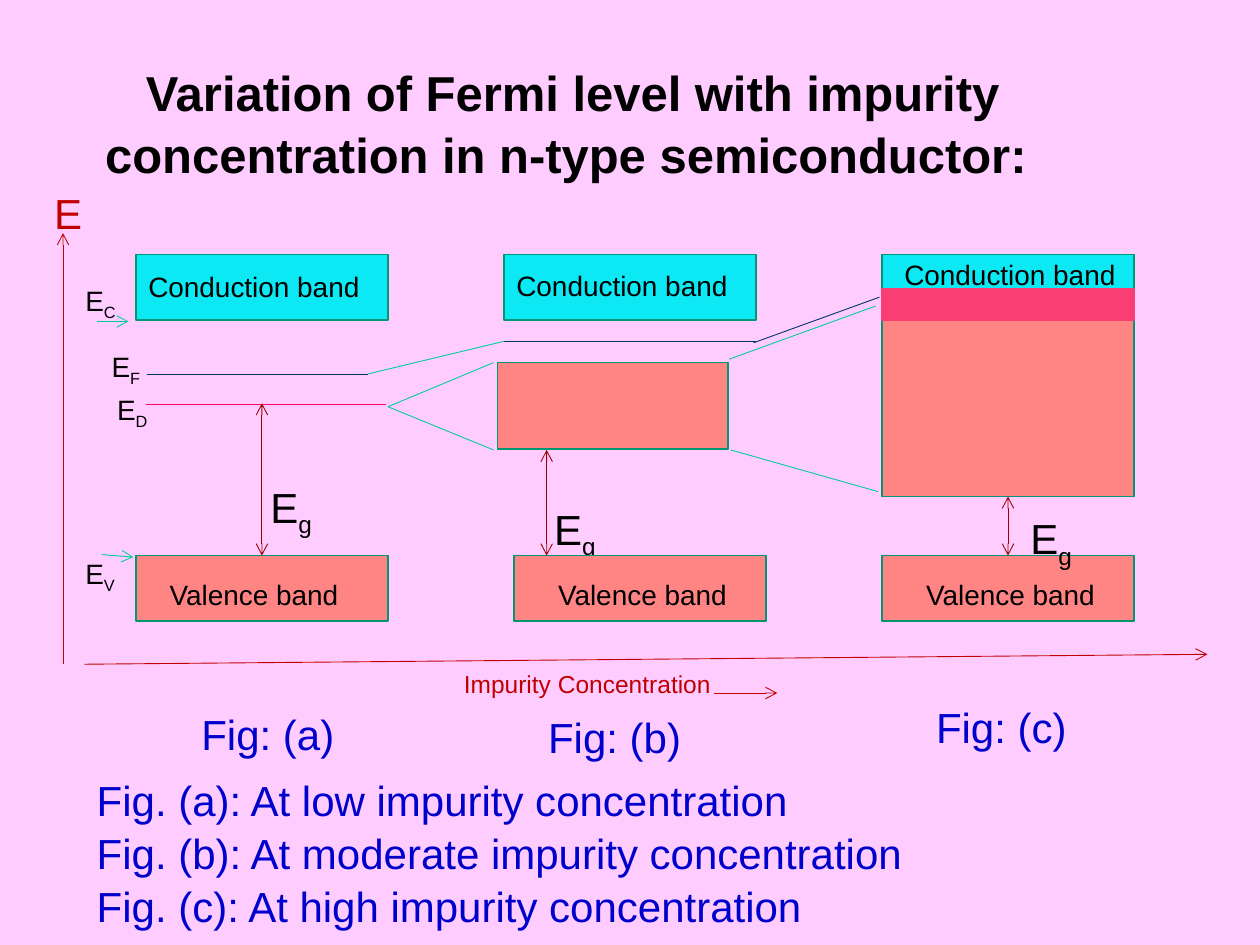
from dataclasses import dataclass

from lxml import etree
from pptx import Presentation
from pptx.dml.color import RGBColor
from pptx.enum.shapes import MSO_CONNECTOR, MSO_SHAPE
from pptx.enum.text import MSO_ANCHOR, MSO_AUTO_SIZE, PP_ALIGN
from pptx.oxml.ns import qn
from pptx.util import Cm, Pt

STRAIGHT = MSO_CONNECTOR.STRAIGHT
RECTANGLE = MSO_SHAPE.RECTANGLE
MIDDLE = MSO_ANCHOR.MIDDLE
CENTER = PP_ALIGN.CENTER
LEFT = PP_ALIGN.LEFT
NO_FIT = MSO_AUTO_SIZE.NONE
TITLE_ONLY = 5
TOP_SIDE, BOTTOM_SIDE = 0, 2


@dataclass(frozen=True)
class Theme:
    font: str = "Arial"
    background: str = "FFCCFF"
    ink: str = "000000"
    caption: str = "0000CC"
    axis: str = "C00000"
    gap: str = "990000"
    link: str = "00CC99"
    fermi: str = "003366"
    donor: str = "FF0066"
    conduction: str = "0CE9F4"
    valence: str = "FF8585"
    overlap: str = "F83E73"
    border: str = "009771"
    title_size: int = 28
    large: int = 24
    label: int = 16
    small: int = 14
    thin: float = 0.5
    outline: float = 1
    leading: float = 1.05


@dataclass(frozen=True)
class Box:
    left: float
    top: float
    width: float
    height: float

    def inner(self, x, y, width, height):
        return Box(self.left + x, self.top + y, width, height)

    def point(self, x, y):
        return Cm(self.left + x), Cm(self.top + y)

    def frame(self):
        return Cm(self.left), Cm(self.top), Cm(self.width), Cm(self.height)


THEME = Theme()
BAND_WIDTH, BAND_HEIGHT = 5.08, 1.32
VALENCE_TOP = 6.07

PANELS = [
    dict(left=2.74, caption="Fig: (a)", caption_at=(1.07, 8.97),
         conduction_at=(0, 0.15), valence_x=0, valence_at=(0.43, 6.35),
         gap_at=(2.46, 4.39), gap_in_front=False, gap_x=2.54, gap_top=3.0,
         levels=[(0.23, 4.67, 2.41, THEME.fermi), (0.2, 5.05, 3.02, THEME.donor)]),
    dict(left=10.16, caption="Fig: (b)", caption_at=(0.64, 9.04),
         conduction_at=(0, 0.13), valence_x=0.2, valence_at=(0.84, 6.35),
         gap_at=(0.76, 4.83), gap_in_front=False, gap_x=0.86, gap_top=3.94,
         levels=[(0, 5.08, 1.75, THEME.fermi)],
         donor_band=(-0.13, 2.18, 4.65, 1.75)),
    dict(left=17.78, caption="Fig: (c)", caption_at=(0.84, 8.84),
         conduction_at=(0.2, -0.1), valence_x=0, valence_at=(0.64, 6.35),
         gap_at=(2.74, 5.03), gap_in_front=True, gap_x=2.54, gap_top=4.95,
         levels=[], donor_band=(0, 0.79, 5.08, 4.09),
         overlap=(0, 0.69, 5.08, 0.64)),
]

LINKS = [
    ((5.08, 3.07), (7.21, 2.18), THEME.link),
    ((5.08, 3.07), (7.21, 3.94), THEME.link),
    ((4.67, 2.41), (7.42, 1.75), THEME.link),
    ((11.96, 2.11), (14.91, 1.04), THEME.link),
    ((11.99, 3.94), (14.96, 4.78), THEME.link),
    ((12.45, 1.78), (14.99, 0.86), THEME.fermi),
]


def rgb(color):
    return RGBColor.from_string(color)


def style_font(font, size, color, **formats):
    for key, value in dict(name=THEME.font, size=Pt(size), **formats).items():
        setattr(font, key, value)
    font.color.rgb = rgb(color)


def add_text(slide, box, lines, size, color, subscript=""):
    frame = slide.shapes.add_textbox(*box.frame()).text_frame
    frame.word_wrap = True
    for index, line in enumerate(lines):
        paragraph = frame.add_paragraph() if index else frame.paragraphs[0]
        paragraph.alignment = LEFT
        paragraph.line_spacing = THEME.leading
        style_font(paragraph.font, size, color)
        for text, baseline in ((line, None), (subscript, "-25000")):
            if text:
                run = paragraph.add_run()
                run.text = text
                style_font(run.font, size, color)
                if baseline:
                    run._r.get_or_add_rPr().set("baseline", baseline)


def add_band(slide, box, fill, border=THEME.border):
    band = slide.shapes.add_shape(RECTANGLE, *box.frame())
    band.shadow.inherit = False
    band.fill.solid()
    band.fill.fore_color.rgb = rgb(fill)
    band.line.color.rgb = rgb(border)
    band.line.width = Pt(THEME.outline)
    return band


def add_line(slide, box, start, end, color, arrows=()):
    line = slide.shapes.add_connector(STRAIGHT, *box.point(*start), *box.point(*end))
    line.line.color.rgb = rgb(color)
    line.line.width = Pt(THEME.thin)
    properties = line._element.spPr
    for arrow in arrows:
        etree.SubElement(properties.find(qn("a:ln")), qn(f"a:{arrow}"), type="arrow")
    etree.SubElement(properties, qn("a:effectLst"))
    return line


def draw_title(slide, box):
    title = slide.shapes.title
    title.left, title.top, title.width, title.height = box.frame()
    frame = title.text_frame
    frame.text = "Variation of Fermi level with impurity concentration in n-type semiconductor: "
    for key, value in dict(word_wrap=True, auto_size=NO_FIT, vertical_anchor=MIDDLE).items():
        setattr(frame, key, value)
    heading = frame.paragraphs[0]
    heading.alignment = CENTER
    heading.line_spacing = THEME.leading
    style_font(heading.runs[0].font, THEME.title_size, THEME.ink, bold=True)


def draw_panel(slide, box, panel):
    def gap_label():
        add_text(slide, box.inner(*panel["gap_at"], 1.57, 1.02), ["E"], THEME.large, THEME.ink, "g")

    if not panel["gap_in_front"]:
        gap_label()
    add_band(slide, box.inner(0, 0, BAND_WIDTH, BAND_HEIGHT), THEME.conduction)
    valence = add_band(slide, box.inner(panel["valence_x"], VALENCE_TOP, BAND_WIDTH, BAND_HEIGHT),
                       THEME.valence)
    donor = None
    if "donor_band" in panel:
        donor = add_band(slide, box.inner(*panel["donor_band"]), THEME.valence)
    if "overlap" in panel:
        add_band(slide, box.inner(*panel["overlap"]), THEME.overlap, THEME.overlap)
    for start, end, height, color in panel["levels"]:
        add_line(slide, box, (start, height), (end, height), color)

    gap_x = panel["gap_x"]
    gap = add_line(slide, box, (gap_x, panel["gap_top"]), (gap_x, VALENCE_TOP),
                   THEME.gap, ("headEnd", "tailEnd"))
    if gap_x == BAND_WIDTH / 2:
        gap.end_connect(valence, TOP_SIDE)
        if donor is not None:
            gap.begin_connect(donor, BOTTOM_SIDE)

    for text, place in (("Conduction band", "conduction_at"), ("Valence band", "valence_at")):
        add_text(slide, box.inner(*panel[place], BAND_WIDTH, 0.97), [text], THEME.label, THEME.ink)
    if panel["gap_in_front"]:
        gap_label()
    add_text(slide, box.inner(*panel["caption_at"], 3.38, 1.02), [panel["caption"]],
             THEME.large, THEME.caption)


def draw_links(slide, box):
    for start, end, color in LINKS:
        add_line(slide, box, start, end, color)


def draw_levels(slide, box):
    for level, x, y in (("C", 0, 0.43), ("F", 0.53, 1.75), ("D", 0.64, 2.62), ("V", 0, 5.92)):
        add_text(slide, box.inner(x, y, 1.27, 0.97), ["E"], THEME.label, THEME.ink, level)
    for start, end in (((0.48, 1.35), (1.12, 1.35)), ((0.58, 6.05), (1.22, 6.1))):
        add_line(slide, box, start, end, THEME.link, ("tailEnd",))


def draw_axes(slide, box):
    for start, end in (((0.43, 9.78), (0.43, 1.09)),
                       ((0.86, 9.78), (23.5, 9.58)),
                       ((13.56, 10.36), (14.83, 10.36))):
        add_line(slide, box, start, end, THEME.axis, ("tailEnd",))
    add_text(slide, box.inner(0, 0, 0.84, 1.07), ["E"], THEME.large, THEME.axis)
    add_text(slide, box.inner(8.26, 9.73, 7.62, 0.86), ["Impurity Concentration"],
             THEME.small, THEME.axis)


def draw_legend(slide, box):
    concentrations = {"a": "low", "b": "moderate", "c": "high"}
    lines = [f"Fig. ({figure}): At {degree} impurity concentration"
             for figure, degree in concentrations.items()]
    add_text(slide, box, lines, THEME.large, THEME.caption)


def main():
    deck = Presentation()
    deck.slide_width, deck.slide_height = Cm(25.4), Cm(19.05)
    slide = deck.slides.add_slide(deck.slide_layouts[TITLE_ONLY])
    slide.background.fill.solid()
    slide.background.fill.fore_color.rgb = rgb(THEME.background)

    draw_title(slide, Box(1.7, 0.84, 19.69, 3.23))
    draw_links(slide, Box(2.74, 5.13, 20.12, 7.39))
    for panel in PANELS:
        draw_panel(slide, Box(panel["left"], 5.13, BAND_WIDTH, 10), panel)
    draw_levels(slide, Box(1.47, 5.13, 1.91, 7.39))
    draw_axes(slide, Box(0.84, 3.61, 23.5, 10.59))
    draw_legend(slide, Box(1.7, 15.44, 20.12, 2.57))
    deck.save("out.pptx")


if __name__ == "__main__":
    main()
